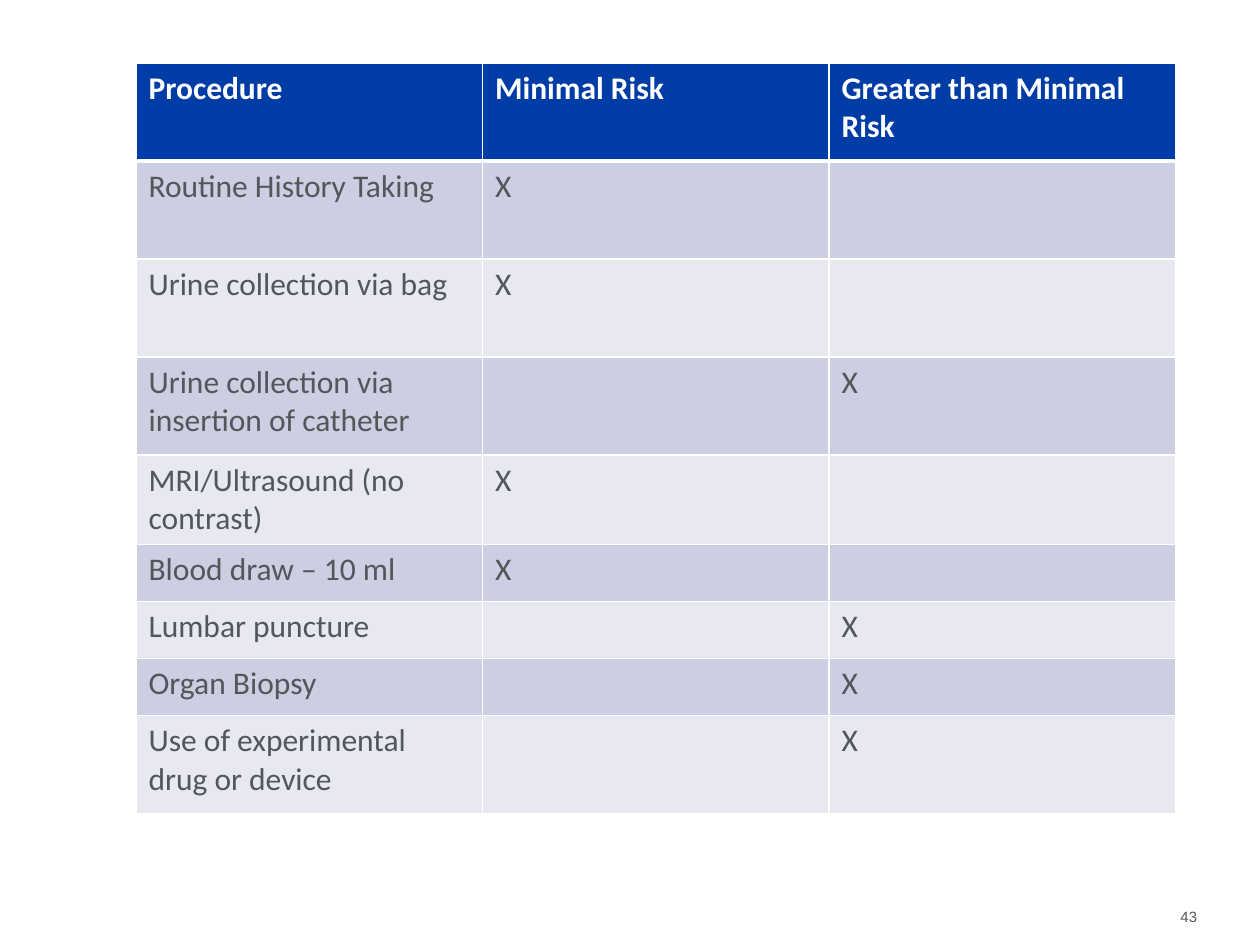
from lxml.etree import SubElement
from pptx import Presentation
from pptx.dml.color import RGBColor
from pptx.enum.text import MSO_ANCHOR, PP_ALIGN
from pptx.oxml.ns import qn
from pptx.util import Emu, Pt

ROWS = [
    ("Procedure", "Minimal Risk", "Greater than Minimal Risk"),
    ("Routine History Taking", "X", ""),
    ("Urine collection via bag", "X", ""),
    ("Urine collection via insertion of catheter", "", "X"),
    ("MRI/Ultrasound (no contrast)", "X", ""),
    ("Blood draw – 10 ml", "X", ""),
    ("Lumbar puncture", "", "X"),
    ("Organ Biopsy", "", "X"),
    ("Use of experimental drug or device", "", "X"),
]
TALL, LOW = 98, 57
HEIGHTS = [TALL] * 4 + [LOW] * 4 + [TALL]
WIDTHS = [346.5] * 3
PAGE = "43"
COLORS = {
    "head": "003CA5",
    "odd": "CCCEE1",
    "even": "E7E8F0",
    "white": "FFFFFF",
    "text": "53565A",
}


def px(n):
    return Emu(round(n * 914400 / 126))


def color(name):
    return RGBColor.from_string(COLORS[name])


def write(frame, text, size=18, font="Calibri", tone="text", bold=False, align=None):
    para = frame.paragraphs[0]
    para.alignment = align
    if not text:
        return
    run = para.add_run()
    run.text = text
    run.font.size = Pt(size)
    run.font.name = font
    run.font.bold = bold
    run.font.color.rgb = color(tone)


def border(cell, top=1, bottom=1):
    props = cell._tc.get_or_add_tcPr()
    for side, width in (("L", 1), ("R", 1), ("T", top), ("B", bottom)):
        line = SubElement(props, qn(f"a:ln{side}"), w=str(Pt(width)))
        fill = SubElement(line, qn("a:solidFill"))
        SubElement(fill, qn("a:srgbClr"), val=COLORS["white"])


def build_table(slide):
    table = slide.shapes.add_table(
        len(ROWS), len(WIDTHS), px(136), px(63), px(sum(WIDTHS)), px(sum(HEIGHTS))
    ).table
    for col, width in zip(table.columns, WIDTHS):
        col.width = px(width)
    for r, (row, height) in enumerate(zip(ROWS, HEIGHTS)):
        table.rows[r].height = px(height)
        head = r == 0
        shade = "head" if head else "odd" if r % 2 else "even"
        for c, text in enumerate(row):
            cell = table.cell(r, c)
            border(cell, top=3 if r == 1 else 1, bottom=3 if head else 1)
            cell.fill.solid()
            cell.fill.fore_color.rgb = color(shade)
            write(cell.text_frame, text, tone="white" if head else "text", bold=head)


def build_page(slide):
    frame = slide.shapes.add_textbox(px(903), px(876), px(294), px(50)).text_frame
    frame.word_wrap = True
    frame.vertical_anchor = MSO_ANCHOR.BOTTOM
    frame.margin_left = frame.margin_right = 0
    frame.margin_top = frame.margin_bottom = 0
    write(frame, PAGE, size=8.5, font="Arial", align=PP_ALIGN.RIGHT)


def main():
    deck = Presentation()
    deck.slide_width, deck.slide_height = px(1260), px(945)
    slide = deck.slides.add_slide(deck.slide_layouts[6])
    build_table(slide)
    build_page(slide)
    deck.save("out.pptx")


if __name__ == "__main__":
    main()
